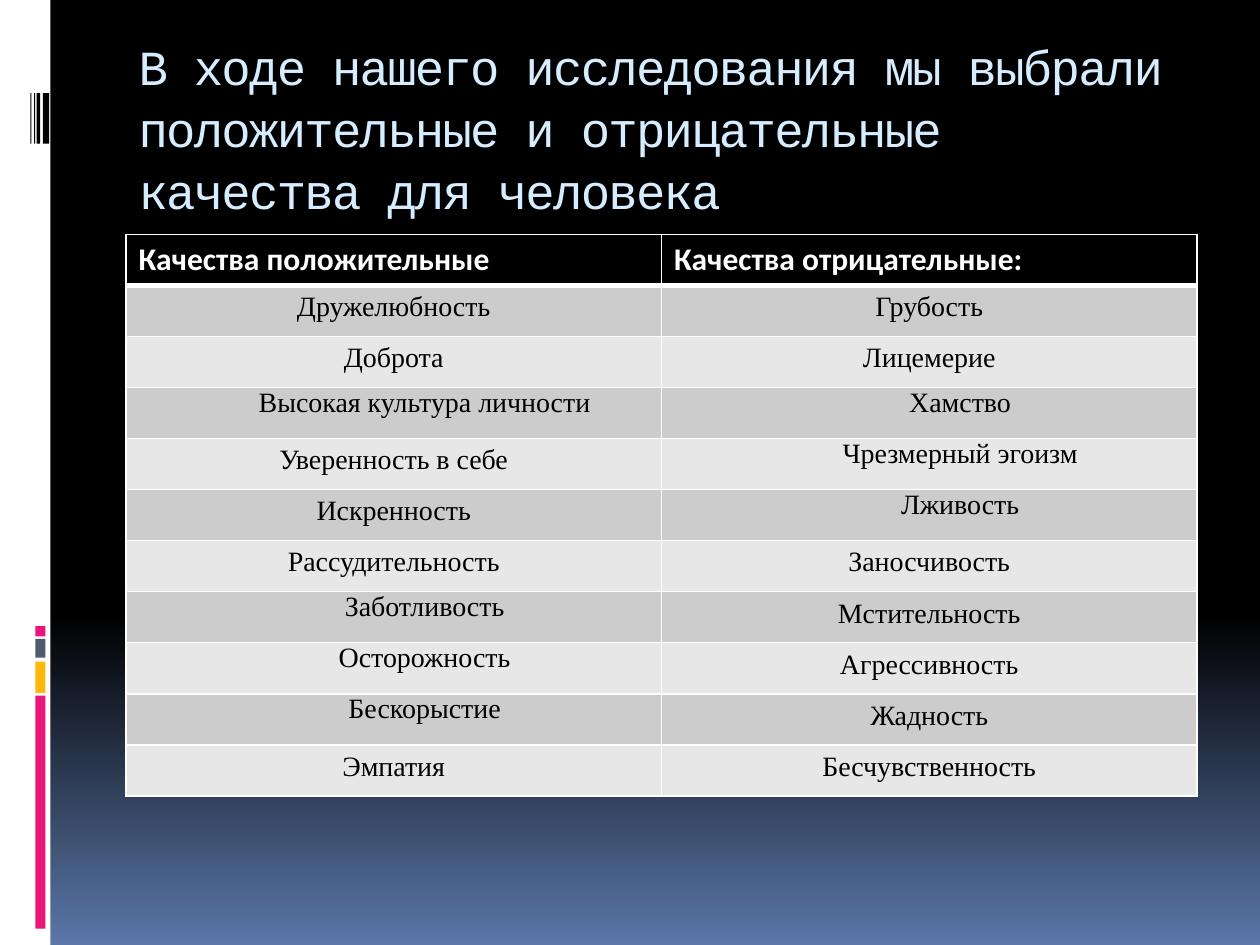
from copy import deepcopy

from pptx import Presentation
from pptx.dml.color import RGBColor
from pptx.enum.shapes import MSO_SHAPE
from pptx.enum.text import MSO_ANCHOR, MSO_AUTO_SIZE, PP_ALIGN
from pptx.oxml import parse_xml
from pptx.oxml.ns import nsdecls, qn
from pptx.util import Inches, Pt

WHITE = RGBColor(0xFF, 0xFF, 0xFF)
BLACK = RGBColor(0x00, 0x00, 0x00)
SKY = RGBColor(0x5B, 0x77, 0xA8)
PINK = RGBColor(0xEA, 0x15, 0x7A)
AMBER = RGBColor(0xFE, 0xB8, 0x0A)
SLATE = RGBColor(0x4E, 0x5B, 0x6F)
PALE_BLUE = RGBColor(0xD6, 0xEC, 0xFF)
BANDS = (RGBColor(0xCC, 0xCC, 0xCC), RGBColor(0xE7, 0xE7, 0xE7))

TITLE = "В ходе нашего исследования мы выбрали положительные и отрицательные качества для человека"
HEADERS = ("Качества положительные", "Качества отрицательные:")
QUALITIES = (
    ("Дружелюбность", "Грубость"),
    ("Доброта", "Лицемерие"),
    ("Высокая культура личности", "Хамство"),
    ("Уверенность в себе", "Чрезмерный эгоизм"),
    ("Искренность", "Лживость"),
    ("Рассудительность", "Заносчивость"),
    ("Заботливость", "Мстительность"),
    ("Осторожность", "Агрессивность"),
    ("Бескорыстие", "Жадность"),
    ("Эмпатия", "Бесчувственность"),
)
INDENTED = {
    "Высокая культура личности", "Хамство", "Чрезмерный эгоизм", "Лживость",
    "Заботливость", "Осторожность", "Бескорыстие",
}


def paint_background(slide):
    """Fill the slide with black that fades to blue at the bottom."""
    fill = slide.background.fill
    fill.gradient()
    fill.gradient_angle = 270
    stop_list = slide._element.find(".//" + qn("a:gsLst"))
    stop_list.append(deepcopy(stop_list[-1]))
    for stop, position, color in zip(fill.gradient_stops, (0, 0.65, 1), (BLACK, BLACK, SKY)):
        stop.position = position
        stop.color.rgb = color


def add_bar(slide, box, color):
    """Add a plain rectangle without outline."""
    shape = slide.shapes.add_shape(MSO_SHAPE.RECTANGLE, *map(Inches, box))
    shape.shadow.inherit = False
    shape.fill.solid()
    shape.fill.fore_color.rgb = color
    shape.line.fill.background()


def add_side_strip(slide, box):
    """Place the white strip with its coloured blocks and thin stripes."""
    left, top, width, height = box
    add_bar(slide, box, WHITE)
    blocks = ((5.52, 1.85, PINK), (5.25, 0.25, AMBER), (5.07, 0.15, SLATE), (4.97, 0.08, PINK))
    for offset, length, color in blocks:
        add_bar(slide, (left + 0.7 * width, top + offset, 0.2 * width, length), color)
    for offset, thickness in ((0.34, 0.05), (0.29, 0.03), (0.27, 0.01), (0.24, 0.01)):
        add_bar(slide, (left + offset, top + 0.74, thickness, 0.4), BLACK)


def add_text(paragraph, text, font_name, size, color, bold=False):
    """Add one formatted run to a paragraph and return it."""
    run = paragraph.add_run()
    run.text = text
    run.font.name = font_name
    run.font.size = Pt(size)
    run.font.color.rgb = color
    run.font.bold = bold
    return run


def place_title(slide, box):
    """Move the title placeholder into its box and write the heading."""
    title = slide.shapes.title
    title.left, title.top, title.width, title.height = map(Inches, box)
    frame = title.text_frame
    frame.word_wrap = True
    frame.auto_size = MSO_AUTO_SIZE.NONE
    frame.vertical_anchor = MSO_ANCHOR.TOP
    paragraph = frame.paragraphs[0]
    paragraph.alignment = PP_ALIGN.LEFT
    paragraph.line_spacing = 1.06
    run = add_text(paragraph, TITLE, "Courier New", 28, PALE_BLUE)
    run.font._element.set("spc", "-100")


def format_cell(cell, color, bottom_width=1):
    """Give a cell white borders and a solid fill."""
    properties = cell._tc.get_or_add_tcPr()
    for side, width in (("L", 1), ("R", 1), ("T", 1), ("B", bottom_width)):
        properties.append(parse_xml(
            f'<a:ln{side} {nsdecls("a")} w="{Pt(width)}"><a:solidFill>'
            f'<a:srgbClr val="{WHITE}"/></a:solidFill></a:ln{side}>'
        ))
    cell.fill.solid()
    cell.fill.fore_color.rgb = color


def write_quality(cell, text):
    """Write a centred quality, indented where the list calls for it."""
    paragraph = cell.text_frame.paragraphs[0]
    paragraph.alignment = PP_ALIGN.CENTER
    add_text(paragraph, text, "Times New Roman", 16, BLACK)
    if text in INDENTED:
        cell.margin_left = cell.margin_right = Inches(0.07)
        cell.margin_top = cell.margin_bottom = 0
        properties = paragraph._p.get_or_add_pPr()
        properties.set("marL", str(Inches(0.49)))
        properties.set("indent", "0")


def add_quality_table(slide, box):
    """Build the two-column table of qualities."""
    rows = len(QUALITIES) + 1
    table = slide.shapes.add_table(rows, len(HEADERS), *map(Inches, box)).table
    for column, text in enumerate(HEADERS):
        cell = table.cell(0, column)
        format_cell(cell, BLACK, 3)
        add_text(cell.text_frame.paragraphs[0], text, "Calibri", 18, WHITE, True)
    for row, pair in enumerate(QUALITIES, 1):
        for column, text in enumerate(pair):
            cell = table.cell(row, column)
            format_cell(cell, BANDS[(row - 1) % 2])
            write_quality(cell, text)


def main():
    """Build and save the slide."""
    presentation = Presentation()
    presentation.slide_width, presentation.slide_height = Inches(10), Inches(7.5)
    slide = presentation.slides.add_slide(presentation.slide_layouts[5])
    paint_background(slide)
    add_side_strip(slide, (0, 0, 0.4, 7.5))
    place_title(slide, (1, 0.21, 8.5, 1.35))
    add_quality_table(slide, (1, 1.86, 8.5, 4.46))
    presentation.save("out.pptx")


if __name__ == "__main__":
    main()
